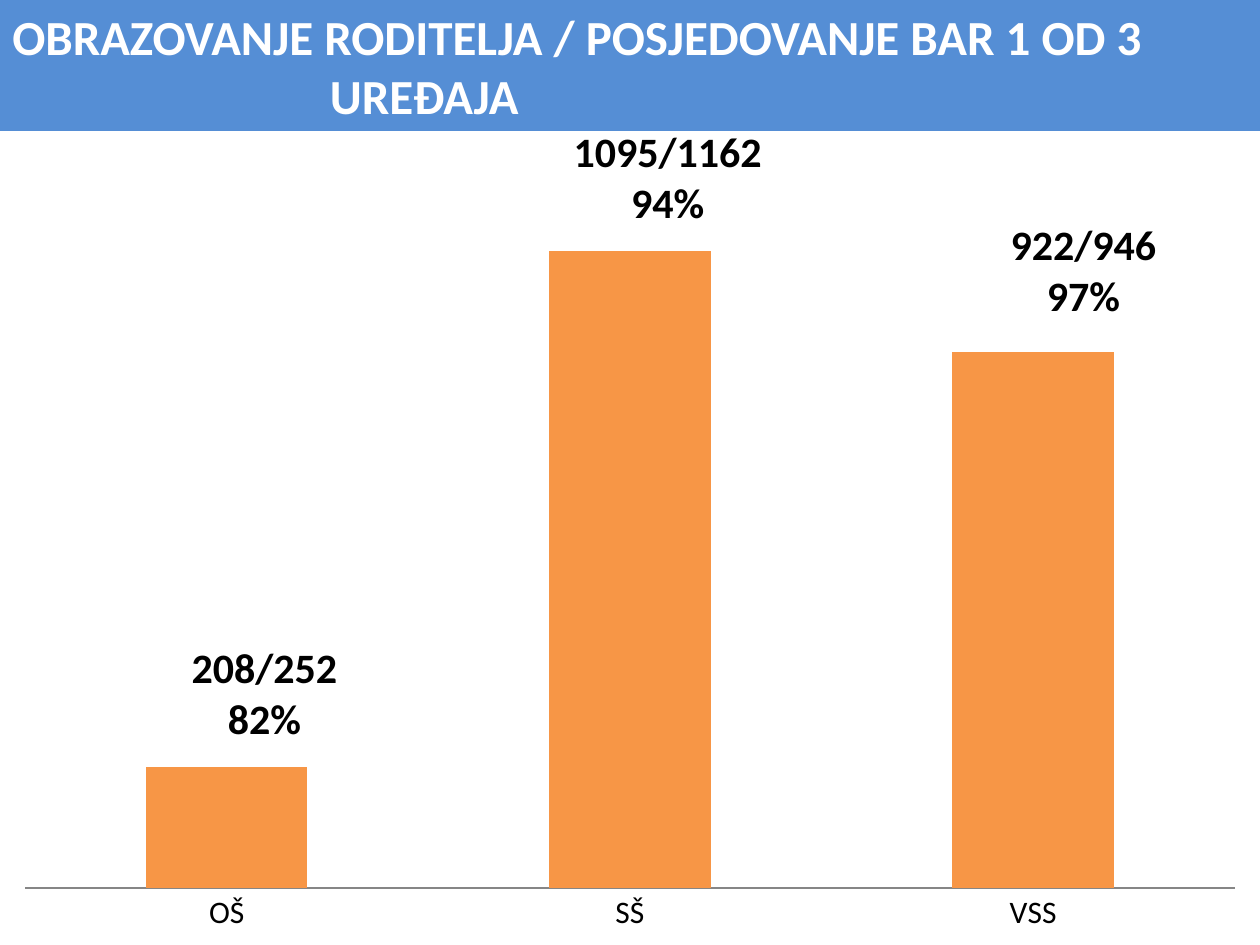
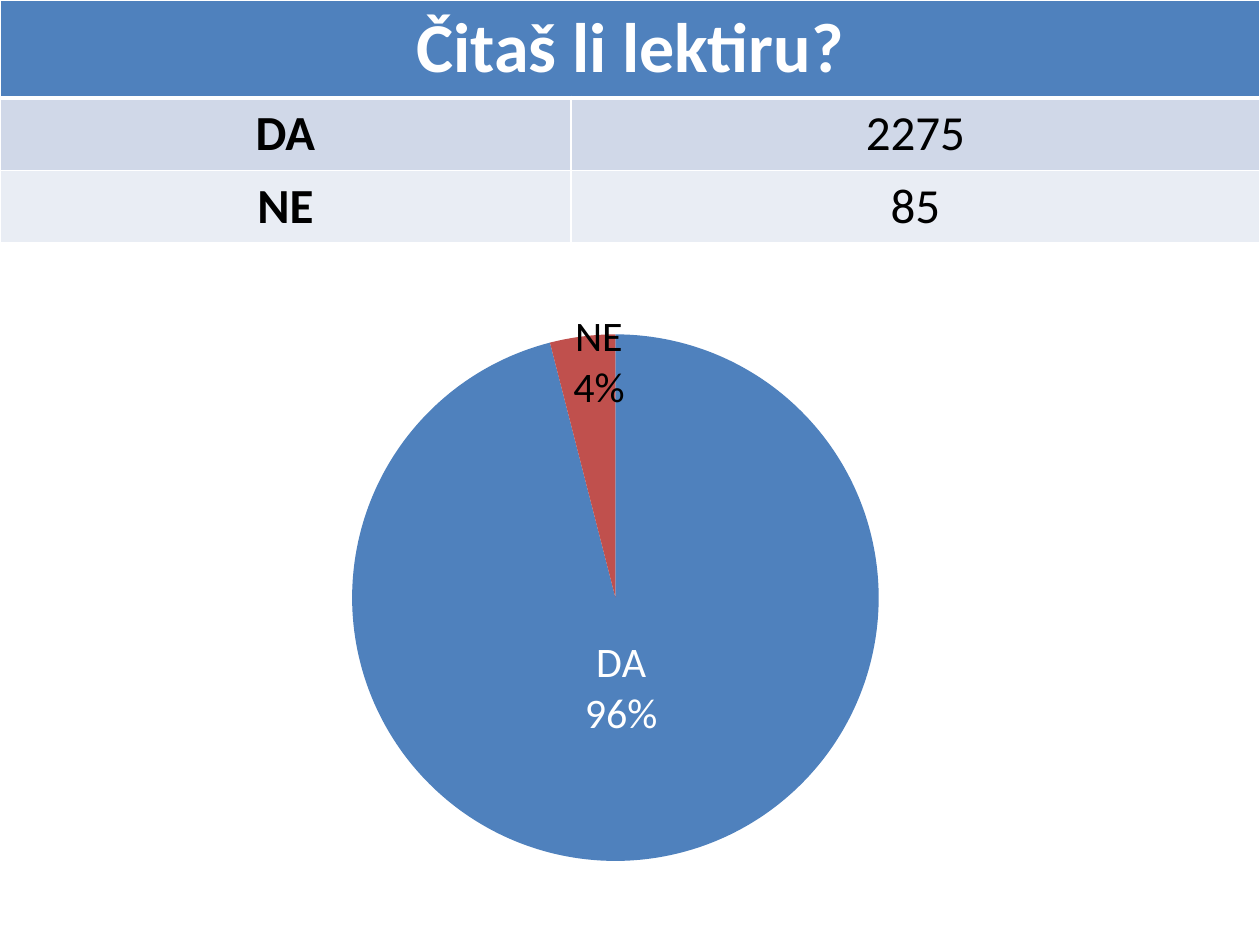
from lxml.etree import SubElement
from pptx import Presentation
from pptx.chart.data import CategoryChartData
from pptx.dml.color import RGBColor
from pptx.enum.chart import (XL_CHART_TYPE, XL_LABEL_POSITION,
                             XL_TICK_LABEL_POSITION, XL_TICK_MARK)
from pptx.enum.shapes import MSO_SHAPE
from pptx.enum.text import MSO_ANCHOR, PP_ALIGN
from pptx.oxml import parse_xml
from pptx.oxml.ns import nsdecls, qn
from pptx.util import Inches, Pt

WHITE = RGBColor(0xFF, 0xFF, 0xFF)
BLACK = RGBColor(0x00, 0x00, 0x00)
BANNER = RGBColor(0x55, 0x8E, 0xD5)
BLUE = RGBColor(0x4F, 0x81, 0xBD)
RED = RGBColor(0xC0, 0x50, 0x4D)
ORANGE = RGBColor(0xF7, 0x96, 0x46)
GREY = RGBColor(0x86, 0x86, 0x86)
ROW_FILLS = (RGBColor(0xD0, 0xD8, 0xE8), RGBColor(0xE9, 0xED, 0xF4))
FONT = "Calibri"


def write(tf, text, size=18, color=BLACK, bold=False, align=None):
    """Put the text into the first paragraph of a text frame as one run."""
    p = tf.paragraphs[0]
    if align is not None:
        p.alignment = align
    r = p.add_run()
    r.text = text
    r.font.name, r.font.size, r.font.bold = FONT, Pt(size), bold
    r.font.color.rgb = color


def manual_layout(**values):
    """Return a c:layout element holding the given fractions of the chart."""
    layout = parse_xml(f"<c:layout {nsdecls('c')}><c:manualLayout/></c:layout>")
    for tag, value in values.items():
        SubElement(layout[0], qn(f"c:{tag}")).set("val", str(value))
    return layout


def place_plot(chart, x, y, w, h):
    plot_area = chart._chartSpace.chart.plotArea
    for old in plot_area.findall(qn("c:layout")):
        plot_area.remove(old)
    plot_area.insert(0, manual_layout(layoutTarget="inner", xMode="edge",
                                      yMode="edge", x=x, y=y, w=w, h=h))


def shift_labels(chart, shifts):
    """Move each point label off its usual place and drop leader lines."""
    for label, (x, y) in zip(chart._chartSpace.iter(qn("c:dLbl")), shifts):
        for old in label.findall(qn("c:layout")):
            label.remove(old)
        label.insert(1, manual_layout(x=x, y=y))
    for leader in chart._chartSpace.iter(qn("c:showLeaderLines")):
        leader.set("val", "0")


def set_borders(cell, bottom=1):
    tc_pr = cell._tc.get_or_add_tcPr()
    widths = {"lnL": 1, "lnR": 1, "lnT": 1, "lnB": bottom}
    for i, (tag, width) in enumerate(widths.items()):
        tc_pr.insert(i, parse_xml(
            f'<a:{tag} {nsdecls("a")} w="{Pt(width)}"><a:solidFill>'
            f'<a:srgbClr val="{WHITE}"/></a:solidFill></a:{tag}>'))


class Deck:
    def __init__(self):
        self.prs = Presentation()
        self.prs.slide_width, self.prs.slide_height = Inches(10), Inches(7.5)
        self.slide = None

    def new_slide(self):
        self.slide = self.prs.slides.add_slide(self.prs.slide_layouts[6])

    def banner(self, text, height, hanging):
        """Add the title band; wrapped lines start at the hanging indent."""
        sp = self.slide.shapes.add_shape(MSO_SHAPE.RECTANGLE, 0, 0,
                                         Inches(10), Inches(height))
        sp.shadow.inherit = False
        sp.fill.solid()
        sp.fill.fore_color.rgb = BANNER
        sp.line.fill.background()
        tf = sp.text_frame
        tf.word_wrap = True
        write(tf, text, size=28, color=WHITE, bold=True, align=PP_ALIGN.LEFT)
        p_pr = tf.paragraphs[0]._p.get_or_add_pPr()
        p_pr.set("marL", str(Inches(hanging)))
        p_pr.set("indent", str(-Inches(hanging)))

    def cell(self, cell, text, fill, bottom=1, **fmt):
        cell.fill.solid()
        cell.fill.fore_color.rgb = fill
        cell.vertical_anchor = MSO_ANCHOR.MIDDLE
        set_borders(cell, bottom)
        if text:
            write(cell.text_frame, text, align=PP_ALIGN.CENTER, **fmt)

    def table(self, title, rows, widths, heights):
        table = self.slide.shapes.add_table(
            len(rows) + 1, len(widths), 0, 0,
            Inches(sum(widths)), Inches(sum(heights))).table
        for col, width in zip(table.columns, widths):
            col.width = Inches(width)
        for row, height in zip(table.rows, heights):
            row.height = Inches(height)
        for c, text in enumerate((title, "")):
            self.cell(table.cell(0, c), text, BLUE, bottom=3,
                      size=40, color=WHITE, bold=True)
        table.cell(0, 0).merge(table.cell(0, len(widths) - 1))
        for r, (row, fill) in enumerate(zip(rows, ROW_FILLS), 1):
            for c, text in enumerate(row):
                self.cell(table.cell(r, c), text, fill, size=28, bold=c == 0)

    def chart(self, kind, box, cats, values, size):
        data = CategoryChartData(number_format="0")
        data.categories = cats
        data.add_series("Series 1", values)
        chart = self.slide.shapes.add_chart(
            kind, *(Inches(v) for v in box), data).chart
        chart.has_legend = chart.has_title = False
        chart.font.name, chart.font.size = FONT, Pt(size)
        chart.font.color.rgb = BLACK
        return chart

    def columns(self, box, cats, values, labels, shifts):
        chart = self.chart(XL_CHART_TYPE.COLUMN_CLUSTERED, box, cats, values, 18)
        plot = chart.plots[0]
        plot.vary_by_categories = False
        plot.gap_width = 150
        axis = chart.value_axis
        axis.minimum_scale, axis.maximum_scale = 0, 1200
        axis.has_major_gridlines = axis.visible = False
        axis = chart.category_axis
        axis.major_tick_mark = XL_TICK_MARK.NONE
        axis.tick_label_position = XL_TICK_LABEL_POSITION.NEXT_TO_AXIS
        axis.format.line.color.rgb = GREY
        series = plot.series[0]
        series.format.fill.solid()
        series.format.fill.fore_color.rgb = ORANGE
        series.data_labels.show_value = True
        font = series.data_labels.font
        font.name, font.size, font.bold = FONT, Pt(24), True
        for i, text in enumerate(labels):
            label = series.points[i].data_label
            write(label.text_frame, text, size=24, bold=True)
            label.position = XL_LABEL_POSITION.OUTSIDE_END
        place_plot(chart, 0.02, 0.07, 0.96, 0.86)
        shift_labels(chart, shifts)

    def pie(self, box, cats, values, colors, label_colors, shifts):
        chart = self.chart(XL_CHART_TYPE.PIE, box, cats, values, 10)
        series = chart.plots[0].series[0]
        for i, (fill, color) in enumerate(zip(colors, label_colors)):
            point = series.points[i]
            point.format.fill.solid()
            point.format.fill.fore_color.rgb = fill
            font = point.data_label.font
            font.name, font.size, font.color.rgb = FONT, Pt(24), color
            point.data_label.position = XL_LABEL_POSITION.CENTER
        shown = {"showVal": 0, "showCatName": 1, "showPercent": 1}
        for label in chart._chartSpace.iter(qn("c:dLbl")):
            for tag, value in shown.items():
                label.find(qn(f"c:{tag}")).set("val", str(value))
            SubElement(label, qn("c:separator")).text = "\n"
        place_plot(chart, 0.02, 0.09, 0.96, 0.81)
        shift_labels(chart, shifts)


def main():
    deck = Deck()

    deck.new_slide()
    deck.columns((0, 1.02, 10, 6.48), ("OŠ", "SŠ", "VSS"), (208, 1095, 922),
                 ("208/252\n82%", "1095/1162\n94%", "922/946\n97%"),
                 ((0.03, -0.02), (0.03, -0.02), (0.04, -0.03)))
    deck.banner("OBRAZOVANJE RODITELJA / POSJEDOVANJE BAR 1 OD 3 UREĐAJA",
                height=1.04, hanging=2.52)

    deck.new_slide()
    deck.table("Čitaš li lektiru?", (("DA", "2275"), ("NE", "85")),
               widths=(4.53, 5.47), heights=(0.75, 0.56, 0.56))
    deck.pie((0.62, 2.19, 8.53, 5.16), ("DA", "NE"), (96, 4), (BLUE, RED),
             (WHITE, BLACK), ((-0.01, -0.06), (0, -0.16)))

    deck.prs.save("out.pptx")


if __name__ == "__main__":
    main()
